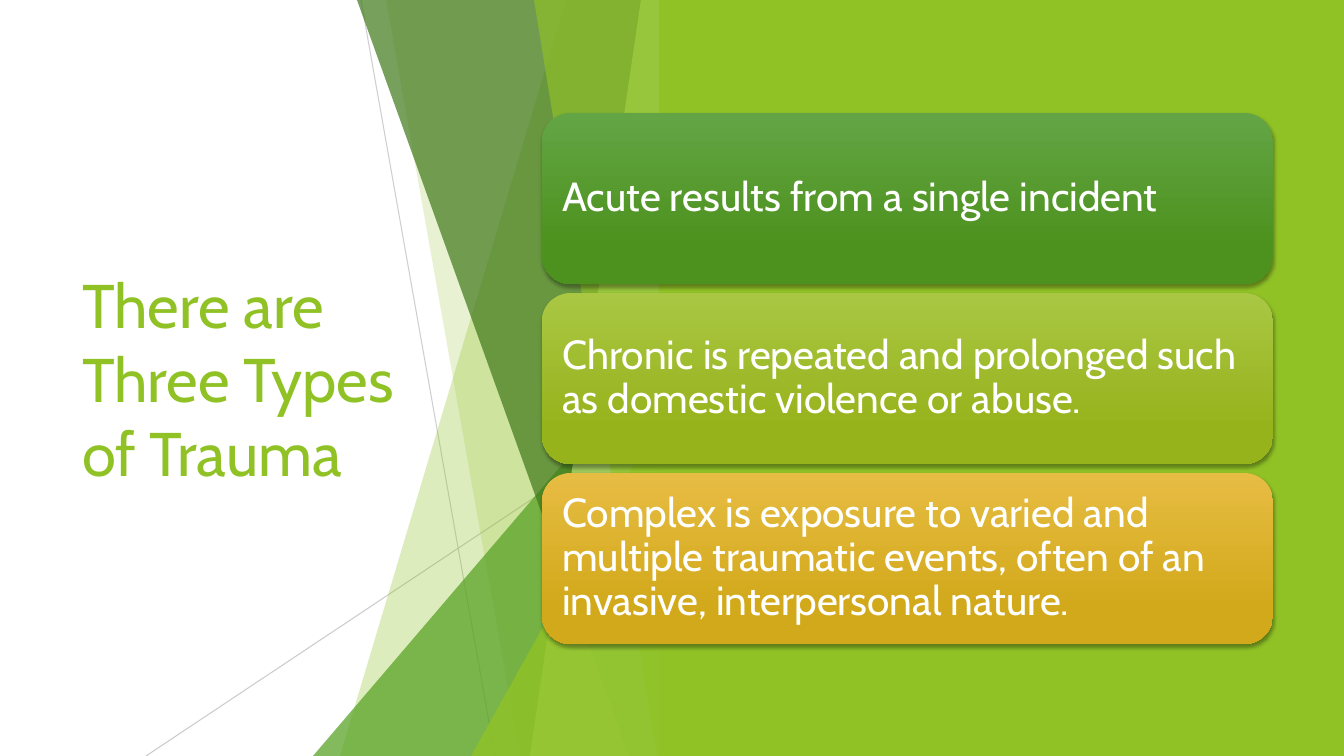
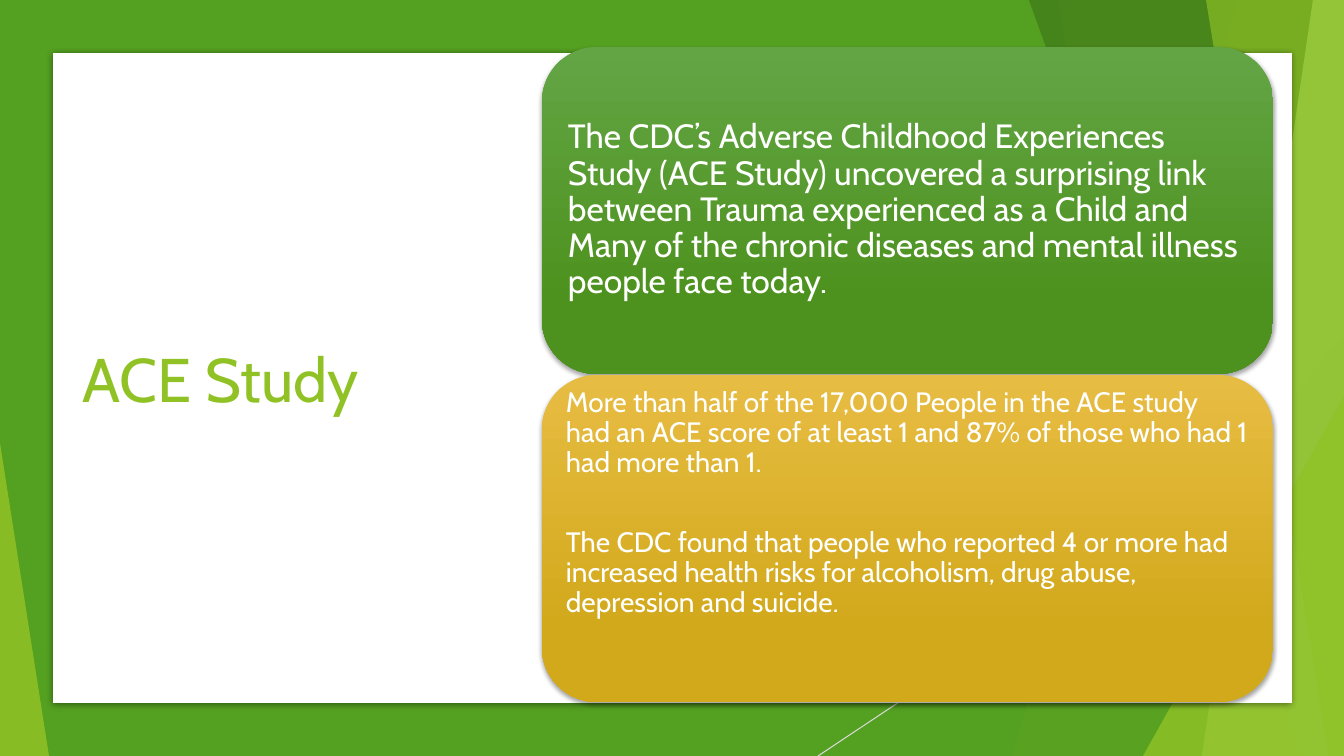
from lxml.etree import SubElement
from pptx import Presentation
from pptx.dml.color import RGBColor
from pptx.enum.shapes import MSO_CONNECTOR, MSO_SHAPE
from pptx.enum.text import MSO_ANCHOR, MSO_AUTO_SIZE, PP_ALIGN
from pptx.oxml.ns import qn
from pptx.util import Emu, Pt

WIDTH, HEIGHT = 1344, 756
SCALE = 12192000 / WIDTH
TITLE_ONLY = 5

LIME = "90C226"
GREEN = "54A021"
FOREST = "3F7819"
PALE_LIME = "C0E474"
WHITE = "FFFFFF"
GREEN_FADE = ("63A545", "4D921E")
OLIVE_FADE = ("AAC744", "97B31C")
GOLD_FADE = ("E7BC43", "D2A91B")


def px(length):
    return Emu(round(length * SCALE))


def rgb(value):
    return RGBColor.from_string(value)


class Deck:
    font = "Cabin"
    title_size = 44
    card_left, card_width = 542, 731

    def __init__(self):
        self.prs = Presentation()
        self.prs.slide_width, self.prs.slide_height = px(WIDTH), px(HEIGHT)
        self.slide = None

    def new_slide(self):
        self.slide = self.prs.slides.add_slide(self.prs.slide_layouts[TITLE_ONLY])

    def set_opacity(self, element, percent):
        if percent < 100:
            for color in element.iter(qn("a:srgbClr")):
                SubElement(color, qn("a:alpha"), val=str(percent * 1000))

    def paint(self, shape, color, opacity=100):
        shape.fill.solid()
        shape.fill.fore_color.rgb = rgb(color)
        shape.line.fill.background()
        shape.shadow.inherit = False
        self.set_opacity(shape.element.spPr, opacity)

    def cast_shadow(self, shape, opacity, blur, distance):
        shape.shadow.inherit = False
        effects = shape.element.spPr.find(qn("a:effectLst"))
        shadow = SubElement(effects, qn("a:outerShdw"), blurRad=str(Pt(blur)),
                            dist=str(Pt(distance)), dir="5400000", rotWithShape="0")
        color = SubElement(shadow, qn("a:srgbClr"), val="000000")
        SubElement(color, qn("a:alpha"), val=str(opacity * 1000))

    def add_preset(self, preset, left, top, width, height):
        return self.slide.shapes.add_shape(preset, px(left), px(top), px(width), px(height))

    def add_panel(self, left, top, width, height, color):
        panel = self.add_preset(MSO_SHAPE.RECTANGLE, left, top, width, height)
        self.paint(panel, color)
        return panel

    def add_wedge(self, left, top, width, apex, color, opacity):
        wedge = self.add_preset(MSO_SHAPE.ISOSCELES_TRIANGLE, left, top, width, HEIGHT - top)
        wedge.adjustments[0] = apex
        self.paint(wedge, color, opacity)

    def add_facet(self, top_x, bottom_x, right, color, opacity):
        outline = self.slide.shapes.build_freeform(top_x, 0, scale=SCALE)
        outline.add_line_segments([(right, 0), (right, HEIGHT), (bottom_x, HEIGHT)], close=True)
        self.paint(outline.convert_to_shape(), color, opacity)

    def add_ray(self, start, end, color, opacity=100):
        ray = self.slide.shapes.add_connector(
            MSO_CONNECTOR.STRAIGHT, *(px(n) for n in start + end))
        ray.line.color.rgb = rgb(color)
        ray.line.width = Pt(0.75)
        self.set_opacity(ray.element.spPr, opacity)
        SubElement(ray.element.spPr, qn("a:effectLst"))

    def add_facet_band(self, right):
        self.add_facet(right - 106, right - 332, right, LIME, 30)
        self.add_facet(right - 286, right - 152, right, LIME, 20)
        self.add_wedge(right - 359, 336, 359, 1, GREEN, 72)
        self.add_facet(right - 315, right - 43, right, FOREST, 70)
        self.add_facet(right - 31, right - 142, right, PALE_LIME, 70)
        self.add_facet(right - 138, right - 15, right, LIME, 65)
        self.add_wedge(right - 201, 396, 201, 1, LIME, 80)

    def add_text(self, paragraph, text, size, color):
        paragraph.alignment = PP_ALIGN.LEFT
        run = paragraph.add_run()
        run.text = text
        run.font.name = self.font
        run.font.size = Pt(size)
        run.font.color.rgb = rgb(color)

    def add_title(self, text):
        title = self.slide.shapes.title
        title.left, title.top, title.width, title.height = map(px, (72, 152, 391, 452))
        title.element.getparent().append(title.element)
        frame = title.text_frame
        frame.word_wrap = True
        frame.auto_size = MSO_AUTO_SIZE.NONE
        frame.vertical_anchor = MSO_ANCHOR.MIDDLE
        self.add_text(frame.paragraphs[0], text, self.title_size, LIME)

    def add_card(self, top, height, fade, texts, size, inset, inset_bottom=None, gap=0):
        card = self.add_preset(MSO_SHAPE.ROUNDED_RECTANGLE,
                               self.card_left, top, self.card_width, height)
        card.fill.gradient()
        card.fill.gradient_angle = 270
        for stop, color, position in zip(card.fill.gradient_stops, fade, (0, 0.78)):
            stop.color.rgb = rgb(color)
            stop.position = position
        card.line.fill.background()
        self.cast_shadow(card, 35, 3, 2)
        frame = card.text_frame
        frame.word_wrap = True
        frame.vertical_anchor = MSO_ANCHOR.MIDDLE
        frame.margin_left = frame.margin_right = px(inset)
        frame.margin_top = px(inset if inset_bottom is None else 0)
        frame.margin_bottom = px(inset if inset_bottom is None else inset_bottom)
        for index, text in enumerate(texts):
            paragraph = frame.add_paragraph() if index else frame.paragraphs[0]
            paragraph.line_spacing = 0.9
            if index < len(texts) - 1:
                paragraph.space_after = Pt(gap)
            self.add_text(paragraph, text, size, WHITE)


def build_trauma_types(deck):
    deck.new_slide()
    deck.add_title("There are Three Types of Trauma")
    deck.add_ray((361, 0), (495, HEIGHT), "BFBFBF", 75)
    deck.add_ray((672, 406), (146, HEIGHT), "BFBFBF", 80)
    deck.add_facet_band(672)
    deck.add_panel(659, 0, WIDTH - 659, HEIGHT, LIME)
    trauma_types = [
        (GREEN_FADE, "Acute results from a single incident"),
        (OLIVE_FADE, "Chronic is repeated and prolonged such as domestic violence or abuse."),
        (GOLD_FADE, "Complex is exposure to varied and multiple traumatic events, "
                    "often of an invasive, interpersonal nature."),
    ]
    for row, (fade, text) in enumerate(trauma_types):
        deck.add_card(113 + row * 180, 171, fade, [text], 29, 12)


def build_ace_study(deck):
    deck.new_slide()
    deck.add_panel(0, 0, WIDTH, HEIGHT, GREEN)
    deck.add_ray((WIDTH, 406), (818, HEIGHT), "D9D9D9")
    deck.add_facet_band(WIDTH)
    deck.add_wedge(0, 443, 49, 0, LIME, 85)
    sheet = deck.add_panel(53, 53, 1239, 650, WHITE)
    deck.cast_shadow(sheet, 43, 5, 1.4)
    deck.add_title("ACE Study")
    deck.add_card(47, 327, GREEN_FADE, [
        "The CDC’s Adverse Childhood Experiences Study (ACE Study) uncovered a surprising "
        "link between Trauma experienced as a Child and Many of the chronic diseases and "
        "mental illness people face today.",
    ], 24, 10)
    deck.add_card(375, 327, GOLD_FADE, [
        "More than half of the 17,000 People in the ACE study had an ACE score of at least 1 "
        "and 87% of those who had 1 had more than 1.",
        "The CDC found that people who reported 4 or more had increased health risks for "
        "alcoholism, drug abuse, depression and suicide.",
    ], 20, 8, inset_bottom=70, gap=35)


def main():
    deck = Deck()
    build_trauma_types(deck)
    build_ace_study(deck)
    deck.prs.save("out.pptx")


if __name__ == "__main__":
    main()
